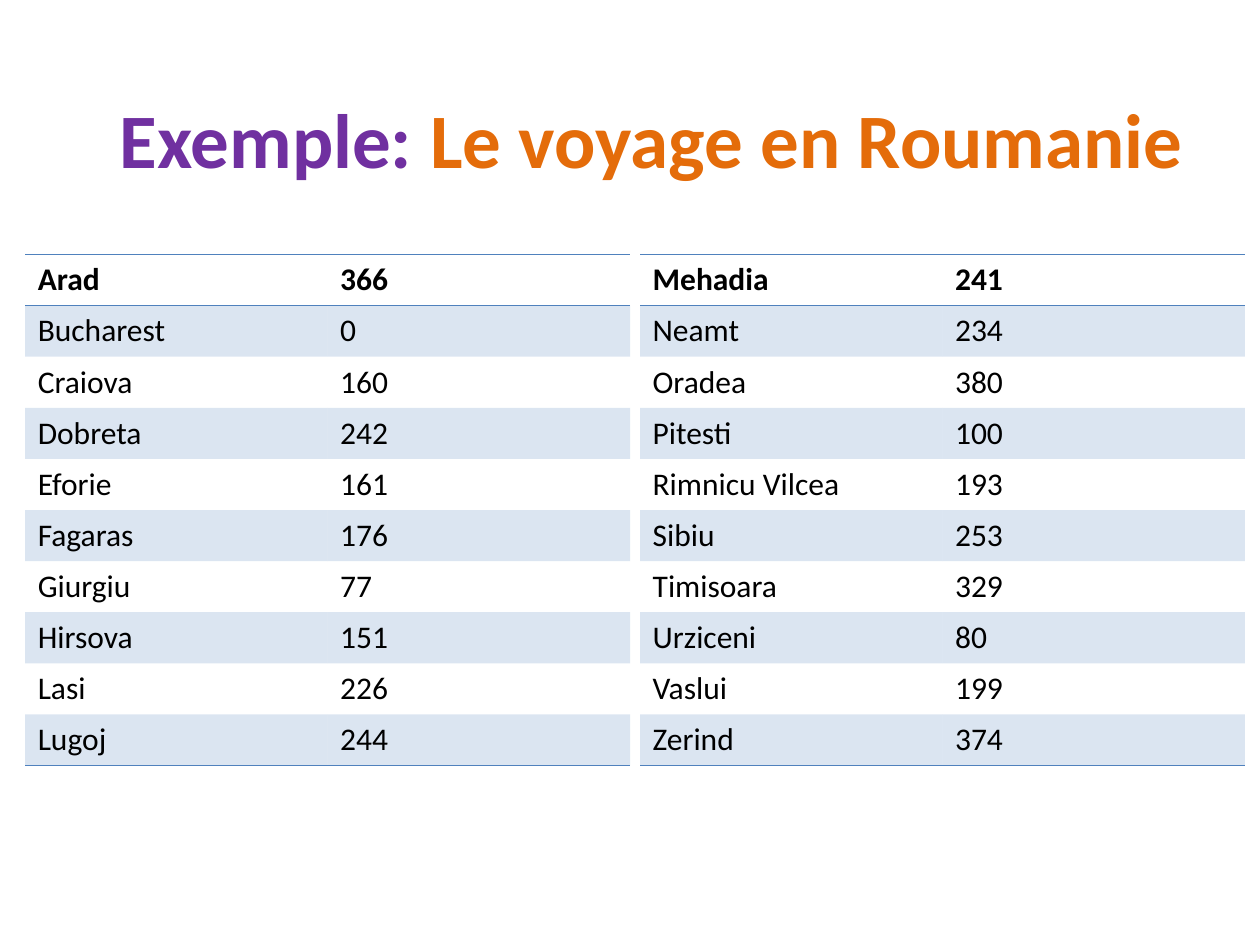
from dataclasses import dataclass

from lxml import etree
from pptx import Presentation
from pptx.dml.color import RGBColor
from pptx.enum.text import MSO_ANCHOR, PP_ALIGN
from pptx.oxml.ns import qn
from pptx.util import Inches, Pt

CENTER = PP_ALIGN.CENTER
MIDDLE = MSO_ANCHOR.MIDDLE
TITLE_ONLY = 5
PLAIN_TABLE_STYLE = "{2D5ABB26-0587-4C30-8999-92F81FD0307C}"


@dataclass(frozen=True)
class Theme:
    """Colours, font and type sizes of the slide."""
    font: str = "Calibri"
    title_size: int = 44
    cell_size: int = 18
    rule_width: int = 1
    band_opacity: int = 20
    purple: str = "7030A0"
    orange: str = "E46C0A"
    blue: str = "4F81BD"
    black: str = "000000"


THEME = Theme()

TITLE_PARTS = [("Exemple: ", THEME.purple), ("Le voyage en Roumanie", THEME.orange)]

DISTANCES = [
    ("Arad", 366), ("Bucharest", 0), ("Craiova", 160), ("Dobreta", 242),
    ("Eforie", 161), ("Fagaras", 176), ("Giurgiu", 77), ("Hirsova", 151),
    ("Lasi", 226), ("Lugoj", 244), ("Mehadia", 241), ("Neamt", 234),
    ("Oradea", 380), ("Pitesti", 100), ("Rimnicu Vilcea", 193), ("Sibiu", 253),
    ("Timisoara", 329), ("Urziceni", 80), ("Vaslui", 199), ("Zerind", 374),
]
ROWS_PER_TABLE = 10
TABLE_LEFTS = (0.2, 5.08)
TABLE_TOP = 2.02
COLUMN_WIDTH = 2.4
ROW_HEIGHT = 0.4


def format_run(run, size, color, bold):
    """Give a run its font, size, colour and weight."""
    run.font.name = THEME.font
    run.font.size = Pt(size)
    run.font.bold = bold
    run.font.color.rgb = RGBColor.from_string(color)


def add_title(slide):
    """Place the title and colour its two parts."""
    title = slide.shapes.title
    title.left, title.top = Inches(0.67), Inches(0.47)
    title.width, title.height = Inches(9), Inches(1.25)
    title.text_frame.vertical_anchor = MIDDLE
    heading = title.text_frame.paragraphs[0]
    heading.alignment = CENTER
    for words, color in TITLE_PARTS:
        run = heading.add_run()
        run.text = words
        format_run(run, THEME.title_size, color, True)


def add_rules(cell, sides):
    """Draw blue rules on the given sides of a cell, in schema order."""
    properties = cell._tc.get_or_add_tcPr()
    for position, side in enumerate(sides):
        rule = etree.Element(qn(f"a:ln{side}"), w=str(Pt(THEME.rule_width)))
        fill = etree.SubElement(rule, qn("a:solidFill"))
        etree.SubElement(fill, qn("a:srgbClr"), val=THEME.blue)
        properties.insert(position, rule)


def fill_band(cell, banded):
    """Fill a banded cell with translucent blue and leave others clear."""
    if not banded:
        cell.fill.background()
        return
    cell.fill.solid()
    cell.fill.fore_color.rgb = RGBColor.from_string(THEME.blue)
    color = cell._tc.tcPr.find(".//" + qn("a:srgbClr"))
    etree.SubElement(color, qn("a:alpha"), val=str(THEME.band_opacity * 1000))


def add_distance_table(slide, left, distances):
    """Add a two-column table of cities and distances."""
    count = len(distances)
    table = slide.shapes.add_table(
        count, 2, Inches(left), Inches(TABLE_TOP),
        Inches(2 * COLUMN_WIDTH), Inches(count * ROW_HEIGHT)).table
    table._tbl.tblPr.find(qn("a:tableStyleId")).text = PLAIN_TABLE_STYLE
    rules = {0: "TB", count - 1: "B"}
    for row, entry in enumerate(distances):
        for column, value in enumerate(entry):
            cell = table.cell(row, column)
            cell.text_frame.text = str(value)
            format_run(cell.text_frame.paragraphs[0].runs[0],
                       THEME.cell_size, THEME.black, row == 0)
            fill_band(cell, row % 2 == 1)
            add_rules(cell, rules.get(row, ""))


def main():
    """Build the slide and save it."""
    presentation = Presentation()
    presentation.slide_width, presentation.slide_height = Inches(10), Inches(7.5)
    slide = presentation.slides.add_slide(presentation.slide_layouts[TITLE_ONLY])
    add_title(slide)
    for index, left in enumerate(TABLE_LEFTS):
        start = index * ROWS_PER_TABLE
        add_distance_table(slide, left, DISTANCES[start:start + ROWS_PER_TABLE])
    presentation.save("out.pptx")


if __name__ == "__main__":
    main()
